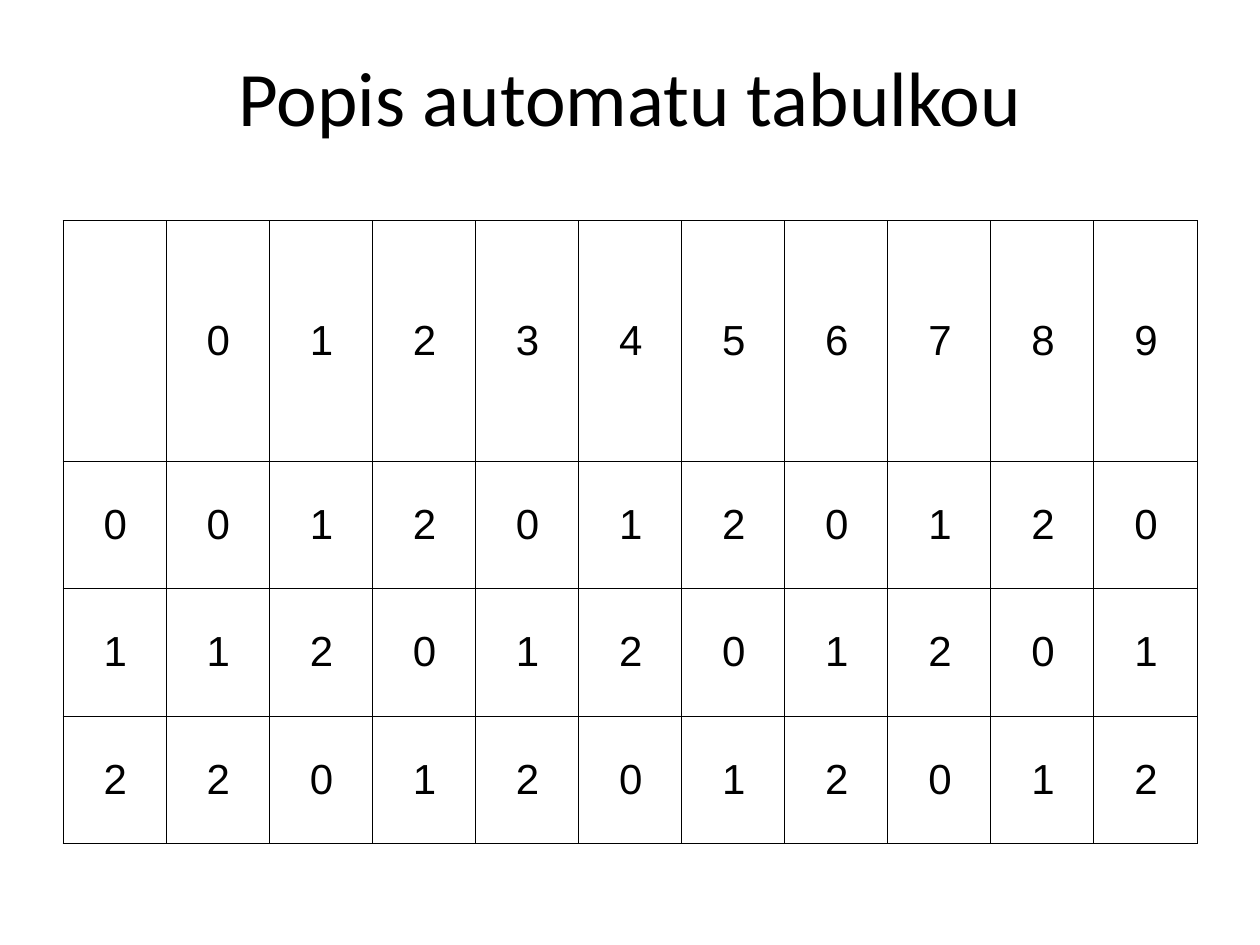
from lxml.etree import SubElement as Sub
from pptx import Presentation
from pptx.dml.color import RGBColor as RGB
from pptx.enum.text import MSO_ANCHOR as Anchor, PP_ALIGN as Align
from pptx.oxml.ns import qn
from pptx.util import Cm, Pt

BLACK = RGB(0, 0, 0)
TITLE = "Popis automatu tabulkou"
STATES = range(3)
DIGITS = range(10)
LEFT, WIDTH = Cm(1.27), Cm(22.86)
HEAD, ROW = Cm(4.85), Cm(2.57)

TITLE_BOX = dict(left=LEFT, top=Cm(0.76), width=WIDTH, height=Cm(3.18))
TITLE_FRAME = dict(vertical_anchor=Anchor.TOP, word_wrap=True, margin_top=Cm(0.23))
TITLE_FONT = dict(name="Calibri", size=Pt(44))
CELL = dict(vertical_anchor=Anchor.MIDDLE, margin_left=Cm(0.25),
            margin_right=Cm(0.25), margin_top=Cm(0.18), margin_bottom=Cm(0.13))
CELL_PARA = dict(alignment=Align.CENTER, line_spacing=0.93)
CELL_FONT = dict(name="Arial", size=Pt(24))


def apply(item, form):
    for key, value in form.items():
        setattr(item, key, value)


def style(para, form, font):
    apply(para, form)
    apply(para.font, font)
    para.font.color.rgb = BLACK


def add_title(slide):
    title = slide.shapes.title
    apply(title, TITLE_BOX)
    frame = title.text_frame
    frame.text = TITLE
    apply(frame, TITLE_FRAME)
    style(frame.paragraphs[0], dict(alignment=Align.CENTER), TITLE_FONT)


def add_edges(cell):
    """Draw a thin line on all four sides; call before the fill is set."""
    props = cell._tc.get_or_add_tcPr()
    for side in ("lnL", "lnR", "lnT", "lnB"):
        line = Sub(props, qn(f"a:{side}"), w=str(Pt(0.45)))
        fill = Sub(line, qn("a:solidFill"))
        Sub(fill, qn("a:srgbClr"), val=str(BLACK))


def fill_cell(cell, text):
    cell.text = text
    apply(cell, CELL)
    para = cell.text_frame.paragraphs[0]
    style(para, CELL_PARA, CELL_FONT)
    props = para._p.get_or_add_pPr()
    props.set("marL", str(Cm(0.97)))
    props.set("indent", str(Cm(-0.94)))
    add_edges(cell)
    cell.fill.background()


def add_grid(slide, rows):
    count = len(rows[0])
    height = HEAD + ROW * (len(rows) - 1)
    table = slide.shapes.add_table(
        len(rows), count, LEFT, Cm(4.45), WIDTH, height).table
    apply(table, dict(first_row=False, horz_banding=False))
    for col in table.columns:
        col.width = WIDTH // count
    for i, row in enumerate(rows):
        table.rows[i].height = ROW if i else HEAD
        for j, value in enumerate(row):
            fill_cell(table.cell(i, j), str(value))


def main():
    deck = Presentation()
    apply(deck, dict(slide_width=Cm(25.4), slide_height=Cm(19.05)))
    slide = deck.slides.add_slide(deck.slide_layouts[5])
    add_title(slide)
    # The next state is the remainder of the number read so far, modulo 3.
    moves = [[state] + [(state + digit) % 3 for digit in DIGITS]
             for state in STATES]
    add_grid(slide, [["", *DIGITS]] + moves)
    deck.save("out.pptx")


if __name__ == "__main__":
    main()
